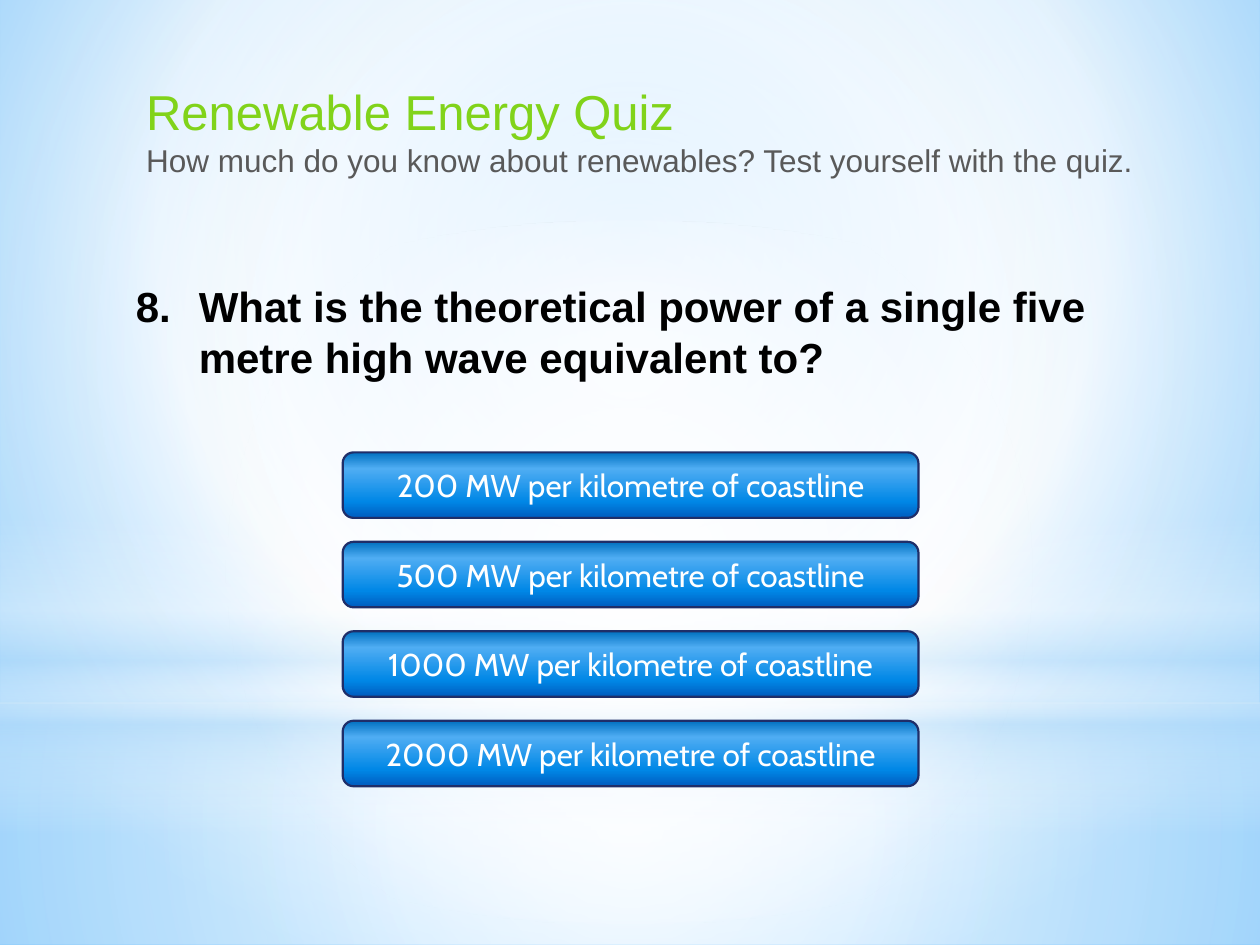
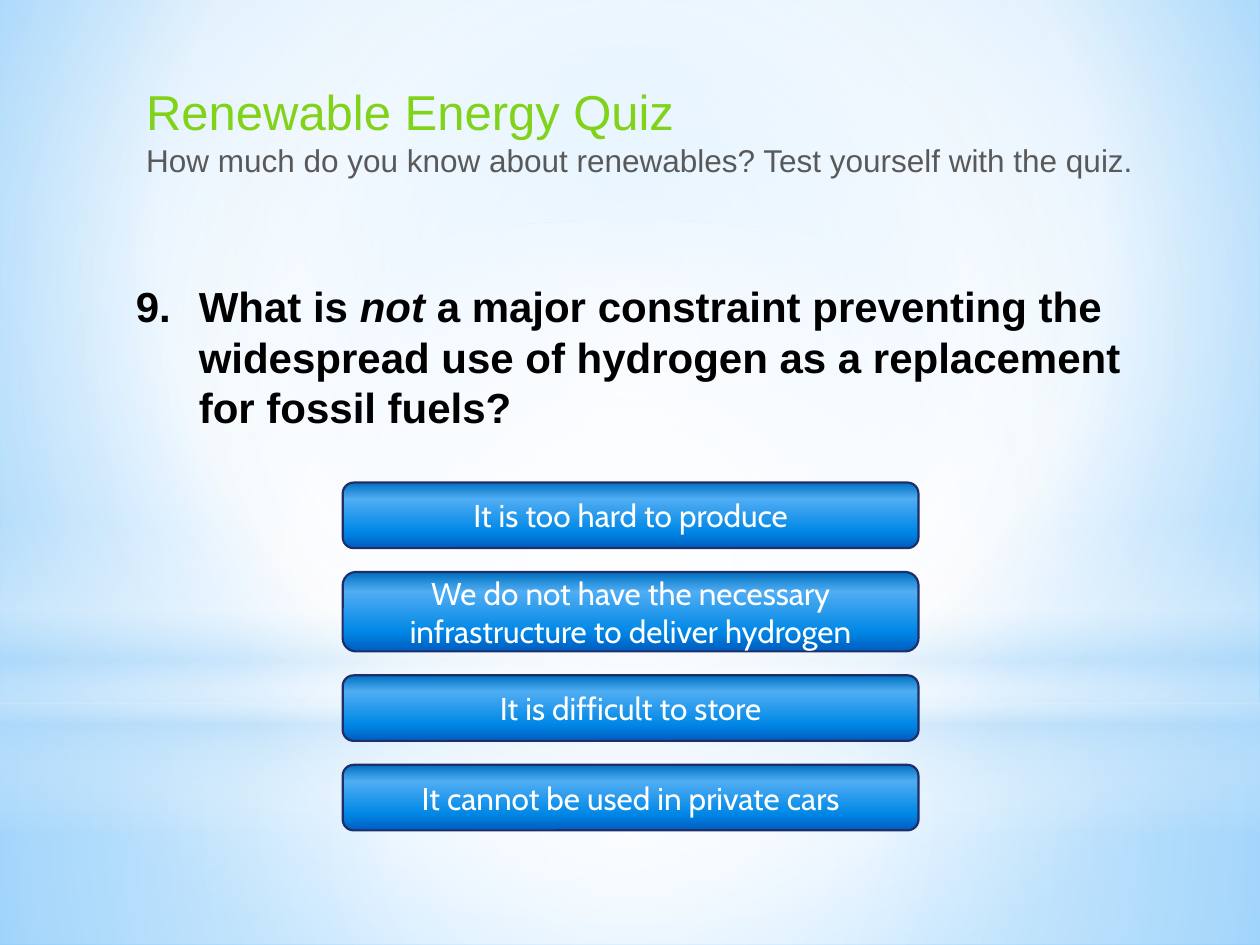
from lxml.etree import SubElement
from pptx import Presentation
from pptx.dml.color import RGBColor
from pptx.enum.shapes import MSO_SHAPE
from pptx.enum.text import MSO_ANCHOR, MSO_AUTO_SIZE, PP_ALIGN
from pptx.oxml.ns import qn
from pptx.util import Inches, Pt

COLS, ROWS = 100, 75
CELL = Inches(0.1)
GREEN, GREY, BLACK, WHITE, NAVY = "81D31A", "595959", "000000", "FFFFFF", "1F2E69"
MIST = "B4DCFA"
CENTRE = (50, 50, 50, 50)
BUTTON_STOPS = [(0, "0070C0"), (25, "4FADF3"), (75, "0087E6"), (100, "005CBF")]
TITLE = "Renewable Energy Quiz"
SUBTITLE = "How much do you know about renewables? Test yourself with the quiz."
QUESTIONS = [
    (8, [("What is the theoretical power of a single five metre high wave equivalent to?", False)],
     9.1, 35.9,
     [(f"{power} MW per kilometre of coastline", 5.2) for power in (200, 500, 1000, 2000)]),
    (9, [("What is ", False), ("not", True),
         (" a major constraint preventing the widespread use of hydrogen "
          "as a replacement for fossil fuels?", False)],
     13.1, 38.3,
     [("It is too hard to produce", 5.2),
      ("We do not have the necessary infrastructure to deliver hydrogen", 6.3),
      ("It is difficult to store", 5.2),
      ("It cannot be used in private cars", 5.2)]),
]


def rgb(value):
    """Return a colour from a hex string."""
    return RGBColor.from_string(value)


def add_text(p, text, size=18, font="Arial", color=BLACK, bold=False, italic=False,
             align=PP_ALIGN.LEFT):
    """Add one formatted run to a paragraph."""
    p.alignment = align
    r = p.add_run()
    r.text = text
    r.font.size, r.font.name = Pt(size), font
    r.font.bold, r.font.italic = bold, italic
    r.font.color.rgb = rgb(color)


def set_gradient(fill, element, stops, focus=None):
    """Fill with (position, colour, opacity) stops, radial when a focus is given."""
    fill.gradient()
    grad = element.find(".//" + qn("a:gradFill"))
    for child in list(grad):
        grad.remove(child)
    stop_list = SubElement(grad, qn("a:gsLst"))
    for position, color, *opacity in stops:
        stop = SubElement(stop_list, qn("a:gs"), pos=str(position * 1000))
        clr = SubElement(stop, qn("a:srgbClr"), val=color)
        if opacity:
            SubElement(clr, qn("a:alpha"), val=str(opacity[0] * 1000))
    if focus:
        radial = SubElement(grad, qn("a:path"), path="circle")
        sides = {side: str(share * 1000) for side, share in zip("ltrb", focus)}
        SubElement(radial, qn("a:fillToRect"), **sides)
    else:
        SubElement(grad, qn("a:lin"), ang="5400000", scaled="0")


class Quiz:
    """Hold the quiz style and the current slide."""

    def __init__(self):
        """Set up the presentation size."""
        self.prs = Presentation()
        self.prs.slide_width, self.prs.slide_height = COLS * CELL, ROWS * CELL
        self.s = None

    def box(self, *cells):
        """Convert grid cells to lengths."""
        return [int(n * CELL) for n in cells]

    def new_slide(self):
        """Start a title-only slide."""
        self.s = self.prs.slides.add_slide(self.prs.slide_layouts[5])

    def shape(self, kind, cells, stops, focus=None):
        """Add a gradient shape without line or shadow."""
        sp = self.s.shapes.add_shape(kind, *self.box(*cells))
        sp.shadow.inherit = False
        sp.line.fill.background()
        set_gradient(sp.fill, sp._element.spPr, stops, focus)
        return sp

    def backdrop(self):
        """Put the shared sky and its glowing bands on the master."""
        master = self.prs.slide_master
        set_gradient(master.background.fill, master._element.cSld.find(qn("p:bg")),
                     [(0, "9ED5FF"), (60, WHITE), (100, "5BB9FF")], (20, 10, 20, 60))
        horizon = 55.8
        bands = [
            (MSO_SHAPE.RECTANGLE, (0, horizon, COLS, ROWS - horizon),
             [(0, WHITE, 91), (37, WHITE, 76), (100, MIST, 79)], CENTRE),
            (MSO_SHAPE.RECTANGLE, (0, 0, COLS, horizon),
             [(0, WHITE, 89), (48, WHITE, 62), (100, MIST, 79)], CENTRE),
            (MSO_SHAPE.RECTANGLE, (0, 41.2, COLS, 25),
             [(0, WHITE, 0), (29, WHITE, 30), (45, MIST, 40), (55, WHITE, 26),
              (65, MIST, 60), (100, WHITE, 0)], None),
            (MSO_SHAPE.OVAL, (0, 17.5, COLS, horizon),
             [(0, WHITE), (56, WHITE, 0)], CENTRE),
        ]
        for i, band in enumerate(bands):
            element = self.shape(*band)._element
            element.nvSpPr.cNvPr.set("id", str(100 + i))
            master.shapes._spTree.insert(2 + i, element)

    def title(self):
        """Format the title placeholder with heading and subtitle."""
        sp = self.s.shapes.title
        sp.left, sp.top, sp.width, sp.height = self.box(10.6, 6, 85, 8.8)
        tf = sp.text_frame
        tf.word_wrap, tf.auto_size = True, MSO_AUTO_SIZE.NONE
        tf.vertical_anchor = MSO_ANCHOR.TOP
        add_text(tf.paragraphs[0], TITLE, size=28, color=GREEN)
        add_text(tf.add_paragraph(), SUBTITLE, color=GREY)

    def question(self, number, parts, height):
        """Add the numbered question with a hanging indent."""
        tf = self.s.shapes.add_textbox(*self.box(9.8, 21.8, 82.7, height)).text_frame
        tf.word_wrap, tf.auto_size = True, MSO_AUTO_SIZE.SHAPE_TO_FIT_TEXT
        p = tf.paragraphs[0]
        for text, italic in parts:
            add_text(p, text, size=24, bold=True, italic=italic)
        pPr = p._p.get_or_add_pPr()
        pPr.set("marL", str(Inches(0.5)))
        pPr.set("indent", str(-Inches(0.5)))
        SubElement(pPr, qn("a:buFont"), typeface="+mj-lt")
        SubElement(pPr, qn("a:buAutoNum"), type="arabicPeriod", startAt=str(number))

    def answers(self, top, options, gap=1.9):
        """Stack the answer buttons with equal gaps."""
        for text, height in options:
            sp = self.shape(MSO_SHAPE.ROUNDED_RECTANGLE, (27.2, top, 45.7, height), BUTTON_STOPS)
            sp.line.color.rgb, sp.line.width = rgb(NAVY), Pt(1.25)
            tf = sp.text_frame
            tf.word_wrap, tf.vertical_anchor = True, MSO_ANCHOR.MIDDLE
            add_text(tf.paragraphs[0], text, font="Cabin", color=WHITE, align=PP_ALIGN.CENTER)
            top += height + gap


def main():
    """Build and save the quiz slides."""
    quiz = Quiz()
    for i, (number, parts, height, top, options) in enumerate(QUESTIONS):
        quiz.new_slide()
        if i == 0:
            quiz.backdrop()
        quiz.title()
        quiz.question(number, parts, height)
        quiz.answers(top, options)
    quiz.prs.save("out.pptx")


if __name__ == "__main__":
    main()
